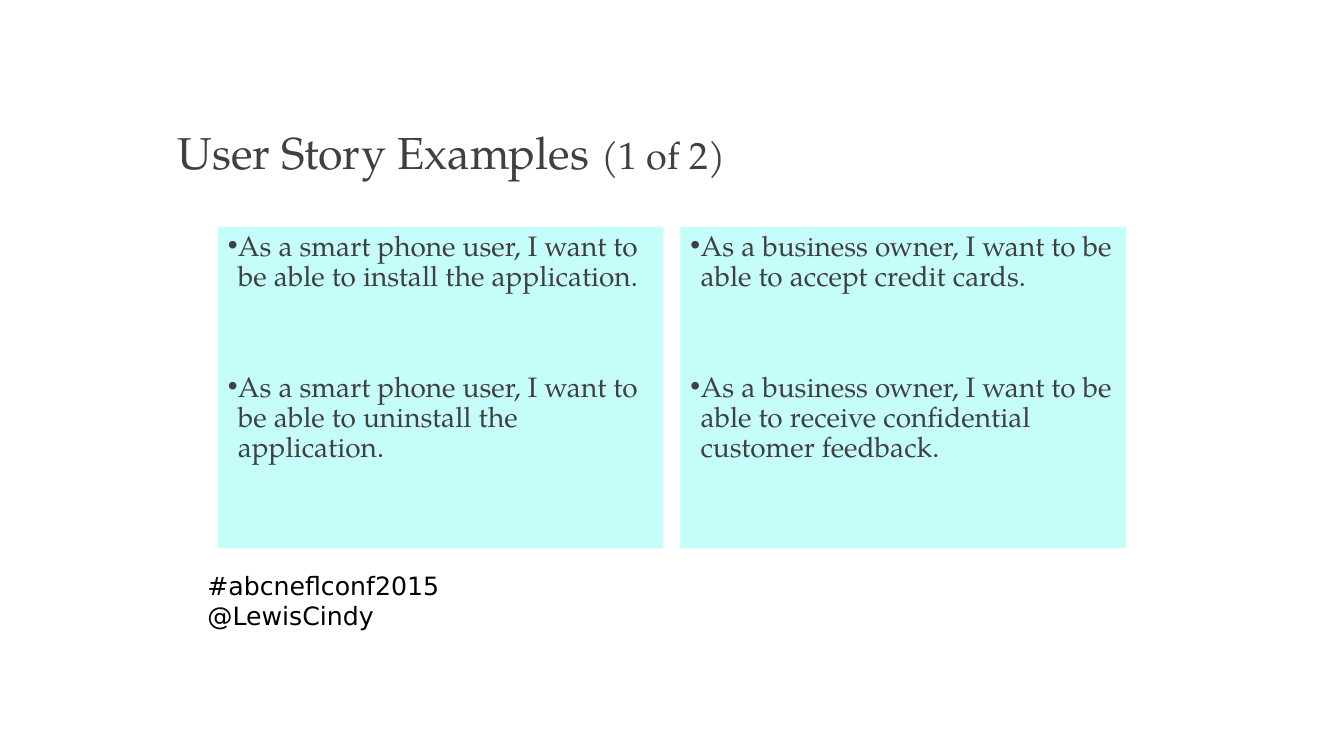
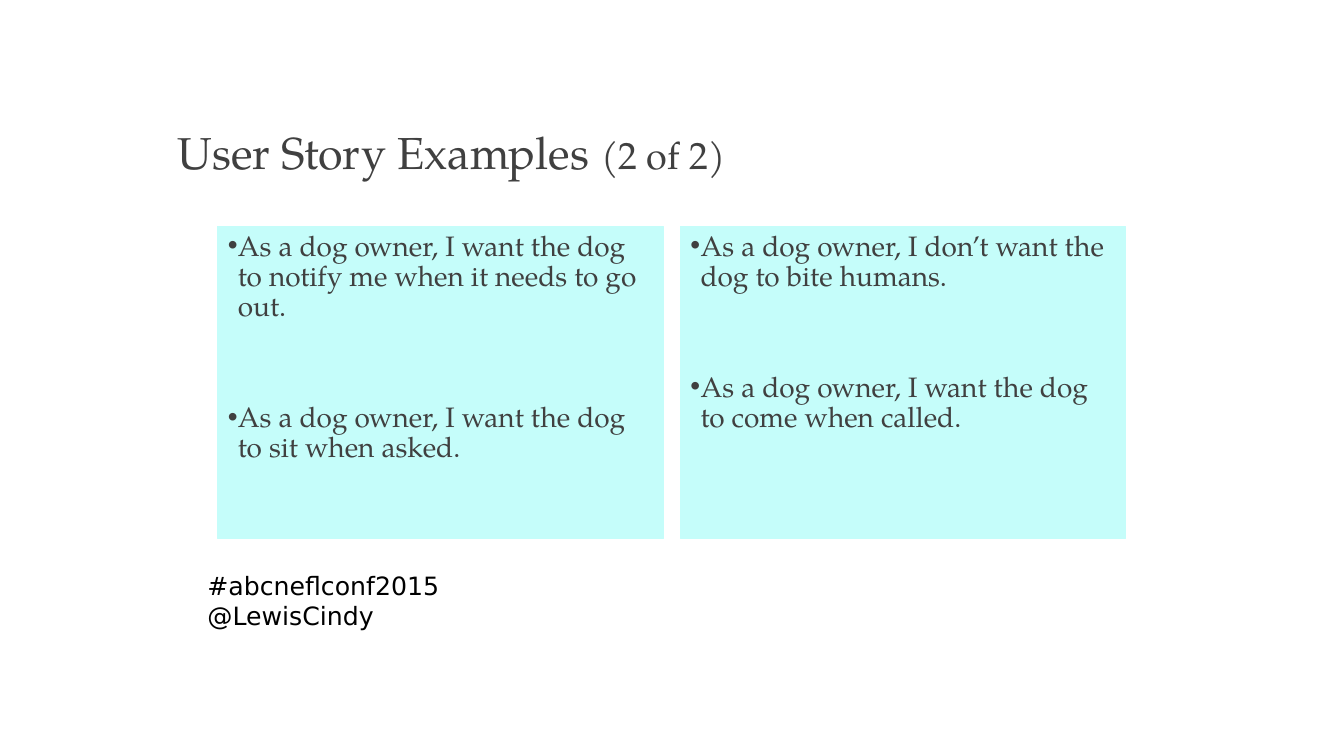
from pptx import Presentation
from pptx.dml.color import RGBColor
from pptx.enum.text import MSO_ANCHOR, MSO_AUTO_SIZE, PP_ALIGN
from pptx.util import Pt

TOP, BOTTOM = MSO_ANCHOR.TOP, MSO_ANCHOR.BOTTOM
NO_FIT, GROW = MSO_AUTO_SIZE.NONE, MSO_AUTO_SIZE.SHAPE_TO_FIT_TEXT
LEFT = PP_ALIGN.LEFT

COLORS = {"text": "404040", "card": "C5FDFA", "footer": "000000"}
SERIF, SANS = "TeX Gyre Pagella", "DejaVu Sans"
TWO_CONTENT = 3
CARD_LEFT, CARD_TOP, CARD_WIDTH, CARD_GAP = 155.5, 162, 318.25, 12.25
HANGING = Pt(7.2)
FOOTER_LINES = ["#abcneflconf2015", "@LewisCindy"]

# Each entry: page mark, card height, outlined cards, stories per card
STORIES = [
    ("(1 of 2)", 229.7, False, [
        ["As a smart phone user, I want to be able to install the application.",
         "As a smart phone user, I want to be able to uninstall the application."],
        ["As a business owner, I want to be able to accept credit cards.",
         "As a business owner, I want to be able to receive confidential customer feedback."],
    ]),
    ("(2 of 2)", 222.5, True, [
        ["As a dog owner, I want the dog to notify me when it needs to go out.",
         "As a dog owner, I want the dog to sit when asked."],
        ["As a dog owner, I don’t want the dog to bite humans.",
         "As a dog owner, I want the dog to come when called."],
    ]),
]


def color(name):
    return RGBColor.from_string(COLORS[name])


class Deck:
    """Shared style and the slide being filled."""

    def __init__(self):
        self.prs = Presentation()
        self.prs.slide_width, self.prs.slide_height = Pt(960), Pt(540)
        self.s = None

    def add_slide(self):
        self.s = self.prs.slides.add_slide(self.prs.slide_layouts[TWO_CONTENT])

    def place(self, sp, left, top, width, height):
        sp.left, sp.top, sp.width, sp.height = map(Pt, (left, top, width, height))

    def frame(self, sp, anchor):
        tf = sp.text_frame
        tf.auto_size, tf.vertical_anchor, tf.word_wrap = NO_FIT, anchor, True
        return tf

    def paragraph(self, tf, first):
        p = tf.paragraphs[0] if first else tf.add_paragraph()
        p.alignment = LEFT
        return p

    def run(self, p, text, size, font=SERIF, fill="text"):
        r = p.add_run()
        r.text = text
        r.font.size, r.font.name = Pt(size), font
        r.font.color.rgb = color(fill)

    def title(self, text, mark):
        sp = self.s.shapes.title
        self.place(sp, 119.5, 41.75, 756, 90)
        p = self.paragraph(self.frame(sp, BOTTOM), True)
        p.line_spacing = 0.9
        self.run(p, text, 32)
        self.run(p, mark, 27)

    def card(self, column, height, outlined, stories):
        sp = self.s.placeholders[column + 1]
        left = CARD_LEFT + column * (CARD_WIDTH + CARD_GAP)
        self.place(sp, left, CARD_TOP, CARD_WIDTH, height)
        sp.fill.solid()
        sp.fill.fore_color.rgb = color("card")
        if outlined:
            sp.line.color.rgb = color("card")
            sp.line.width = Pt(0.75)
        tf = self.frame(sp, TOP)
        for i, story in enumerate(stories):
            p = self.paragraph(tf, i == 0)
            p.line_spacing = 0.9
            p.space_before = Pt(57.5 if i else 0)
            pPr = p._p.get_or_add_pPr()
            pPr.set("marL", str(HANGING))
            pPr.set("indent", str(-HANGING))
            self.run(p, story, 20)

    def footer(self):
        sp = self.s.shapes.add_textbox(Pt(141), Pt(404), Pt(182), Pt(51))
        tf = sp.text_frame
        tf.word_wrap, tf.auto_size = False, GROW
        for i, line in enumerate(FOOTER_LINES):
            self.run(self.paragraph(tf, i == 0), line, 18, SANS, "footer")


def main():
    deck = Deck()
    for mark, height, outlined, cards in STORIES:
        deck.add_slide()
        deck.title("User Story Examples ", mark)
        for column, stories in enumerate(cards):
            deck.card(column, height, outlined, stories)
        deck.footer()
    deck.prs.save("out.pptx")


if __name__ == "__main__":
    main()
